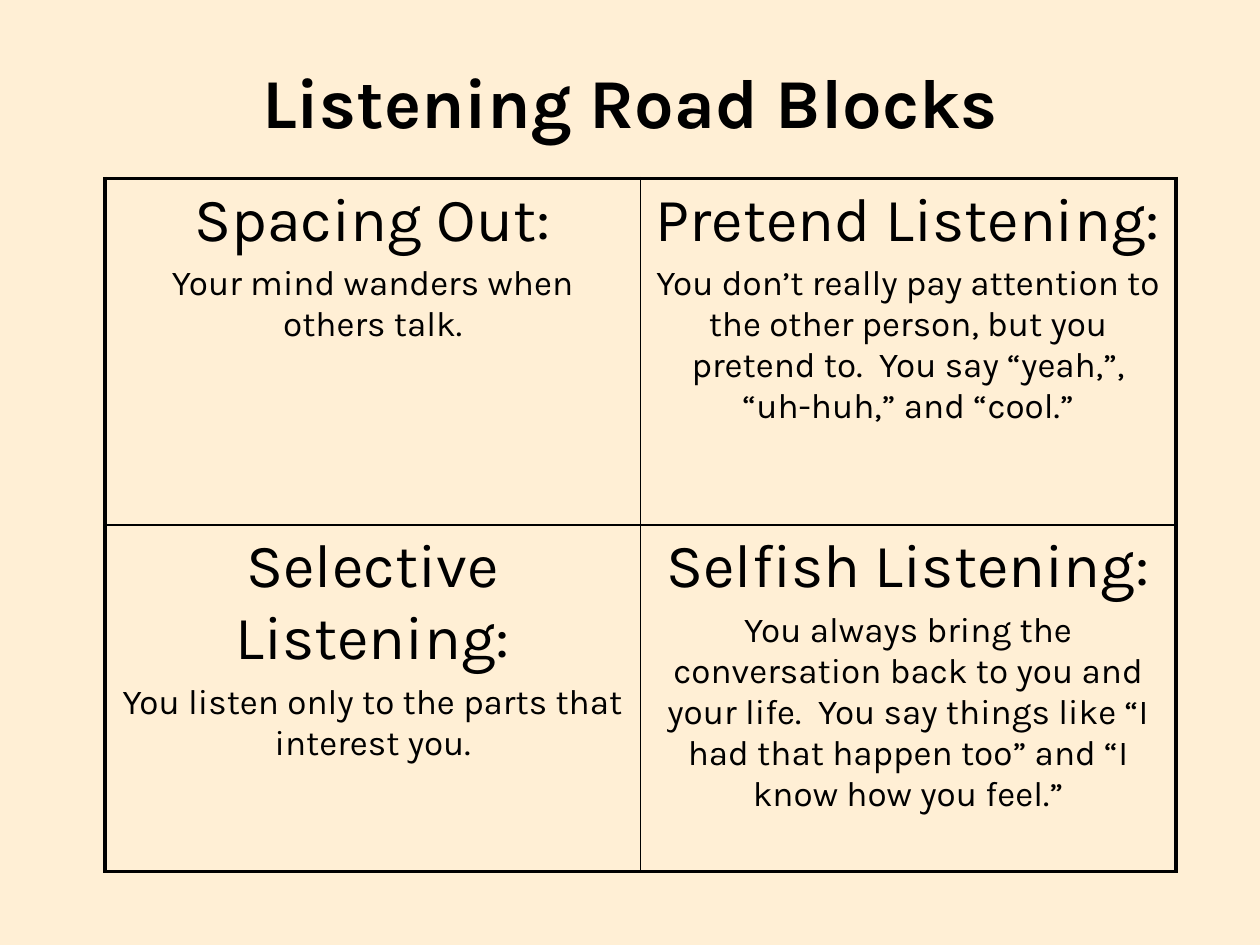
import pptx
import pptx.dml.color
import pptx.enum.text
import pptx.oxml
import pptx.oxml.ns
import pptx.util

Pt = pptx.util.Pt
FONT = "Karla"
COLORS = {"background": "FFEFD5", "ink": "000000"}
OUTER_LINE, INNER_LINE = 2.25, 1

ROAD_BLOCKS = [
    [("Spacing Out:", "Your mind wanders when others talk."),
     ("Pretend Listening:",
      "You don’t really pay attention to the other person, but you pretend to.  "
      "You say “yeah,”, “uh-huh,” and “cool.”")],
    [("Selective Listening:", "You listen only to the parts that interest you."),
     ("Selfish Listening:",
      "You always bring the conversation back to you and your life.  You say "
      "things like “I had that happen too” and “I know how you feel.”")],
]


def color(name):
    return pptx.dml.color.RGBColor.from_string(COLORS[name])


def format_paragraph(paragraph, size, bold=False, before=0):
    paragraph.alignment = pptx.enum.text.PP_ALIGN.CENTER
    paragraph.space_before = Pt(before)
    for run in paragraph.runs:
        run.font.name = FONT
        run.font.size = Pt(size)
        run.font.bold = bold
        run.font.color.rgb = color("ink")


def set_border(cell, side, width):
    cell._tc.get_or_add_tcPr().append(pptx.oxml.parse_xml(
        f'<a:ln{side} {pptx.oxml.ns.nsdecls("a")} w="{Pt(width)}">'
        f'<a:solidFill><a:srgbClr val="{COLORS["ink"]}"/></a:solidFill>'
        f'<a:prstDash val="solid"/></a:ln{side}>'))


def place_title(slide, left, top, width, height):
    title = slide.shapes.title
    title.left, title.top = Pt(left), Pt(top)
    title.width, title.height = Pt(width), Pt(height)
    frame = title.text_frame
    frame.text = "Listening Road Blocks"
    frame.word_wrap = True
    frame.auto_size = pptx.enum.text.MSO_AUTO_SIZE.SHAPE_TO_FIT_TEXT
    frame.vertical_anchor = pptx.enum.text.MSO_ANCHOR.TOP
    format_paragraph(frame.paragraphs[0], 40, bold=True)


def fill_cell(cell, heading, description):
    frame = cell.text_frame
    frame.text = f"{heading}\n{description}"
    format_paragraph(frame.paragraphs[0], 35)
    format_paragraph(frame.paragraphs[1], 20, before=4)


def place_road_blocks(slide, left, top, width, height):
    rows, columns = len(ROAD_BLOCKS), len(ROAD_BLOCKS[0])
    grid = slide.shapes.add_table(
        rows, columns, Pt(left), Pt(top), Pt(width), Pt(height)).table
    grid.first_row = grid.horz_banding = False
    for r, row in enumerate(ROAD_BLOCKS):
        for c, (heading, description) in enumerate(row):
            cell = grid.cell(r, c)
            fill_cell(cell, heading, description)
            # Thick frame outside, thin lines between cells
            on_edge = {"L": c == 0, "R": c == columns - 1,
                       "T": r == 0, "B": r == rows - 1}
            for side, outer in on_edge.items():
                set_border(cell, side, OUTER_LINE if outer else INNER_LINE)
            cell.fill.background()


def main():
    deck = pptx.Presentation()
    deck.slide_width, deck.slide_height = Pt(720), Pt(540)
    slide = deck.slides.add_slide(deck.slide_layouts.get_by_name("Title Only"))
    slide.background.fill.solid()
    slide.background.fill.fore_color.rgb = color("background")
    place_title(slide, 48, 30, 624, 55.5)
    place_road_blocks(slide, 60, 102, 612, 396)
    deck.save("out.pptx")


if __name__ == "__main__":
    main()
